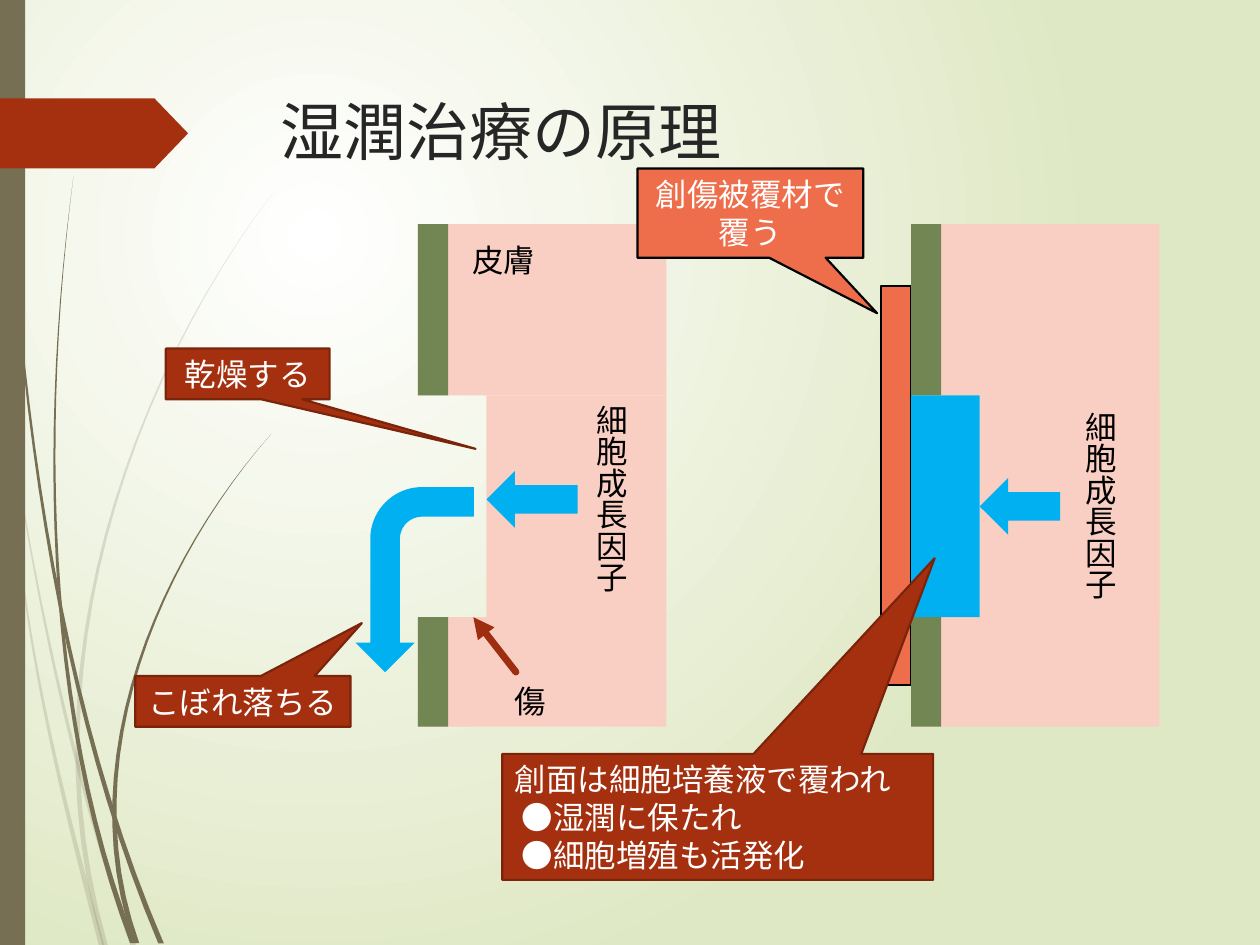
from dataclasses import dataclass

from lxml import etree
from pptx import Presentation
from pptx.dml.color import RGBColor
from pptx.enum.shapes import MSO_CONNECTOR, MSO_SHAPE
from pptx.enum.text import MSO_ANCHOR, PP_ALIGN
from pptx.oxml.ns import qn
from pptx.util import Pt

RECTANGLE = MSO_SHAPE.RECTANGLE
CALLOUT = MSO_SHAPE.RECTANGULAR_CALLOUT
PENNANT = MSO_SHAPE.PENTAGON
RIGHT_ARROW = MSO_SHAPE.RIGHT_ARROW
BENT_ARROW = MSO_SHAPE.BENT_ARROW
STRAIGHT = MSO_CONNECTOR.STRAIGHT
LEFT, CENTER = PP_ALIGN.LEFT, PP_ALIGN.CENTER
TOP, MIDDLE = MSO_ANCHOR.TOP, MSO_ANCHOR.MIDDLE


@dataclass(frozen=True)
class Theme:
    font: str = "TeX Gyre Adventor"
    title_size: float = 36
    text_size: float = 18
    title: str = "262626"
    black: str = "000000"
    white: str = "FFFFFF"
    meadow: str = "DFE8C4"
    grass: str = "766F54"
    red: str = "A53010"
    red_outline: str = "7A240C"
    pointer: str = "9E2E0F"
    orange: str = "EE6E4B"
    skin: str = "F9CFC3"
    epidermis: str = "728653"
    fluid: str = "00B0F0"


@dataclass(frozen=True)
class Blade:
    """A grass blade: a cubic curve from tip to base, bent towards two pull points."""
    tip: tuple
    upper_pull: tuple
    lower_pull: tuple
    base: tuple
    opacity: int = 100


THEME = Theme()
SLIDE_WIDTH, SLIDE_HEIGHT = 720, 540

FAINT = 20
BLADE_WIDTH = 3.2
BLADE_STEPS = 24
BLADES = [
    Blade((0, 205), (18, 331), (40, 439), (76, 540), FAINT),
    Blade((6, 252), (10, 353), (33, 446), (58, 540), FAINT),
    Blade((156, 110), (76, 216), (14, 382), (60, 540), FAINT),
    Blade((2, 0), (4, 180), (25, 382), (92, 539)),
    Blade((42, 101), (24, 238), (24, 403), (76, 539)),
    Blade((155, 248), (94, 317), (40, 432), (78, 539)),
]

# Skin section: an upper, a wounded and a lower row, measured from its top left corner.
SECTION_WIDTH = 142
EPIDERMIS_WIDTH = 17.3
WOUND_DEPTH = 39.2
UPPER_HEIGHT, WOUND_HEIGHT, LOWER_HEIGHT = 98, 126.7, 62.6
WOUND_TOP = UPPER_HEIGHT
LOWER_TOP = WOUND_TOP + WOUND_HEIGHT
SECTION_HEIGHT = LOWER_TOP + LOWER_HEIGHT
ARROW_HEIGHT = 32.4
LABEL_HEIGHT = 29


def rgb(value):
    return RGBColor.from_string(value)


def write_text(text_frame, text, *, size=THEME.text_size, color=THEME.black,
               alignment=LEFT, anchor=TOP):
    text_frame.word_wrap = True
    text_frame.vertical_anchor = anchor
    text_frame.text = text.replace("\n", "\v")
    paragraph = text_frame.paragraphs[0]
    paragraph.alignment = alignment
    for run in paragraph.runs:
        run.font.name = THEME.font
        run.font.size = Pt(size)
        run.font.color.rgb = rgb(color)


def paint(shape, fill, outline=None):
    shape.shadow.inherit = False
    shape.fill.solid()
    shape.fill.fore_color.rgb = rgb(fill)
    if outline:
        shape.line.color.rgb = rgb(outline)
        shape.line.width = Pt(1.25)
    else:
        shape.line.fill.background()


def add_block(slide, kind, box, fill, outline=None, rotation=0):
    shape = slide.shapes.add_shape(kind, *map(Pt, box))
    shape.rotation = rotation
    paint(shape, fill, outline)
    return shape


def add_label(slide, box, text, vertical=False):
    label = slide.shapes.add_textbox(*map(Pt, box))
    write_text(label.text_frame, text)
    if vertical:
        label.element.txBody.bodyPr.set("vert", "eaVert")


def add_callout(slide, box, tip, text, fill=THEME.red, outline=THEME.red_outline, alignment=CENTER):
    """Tip is the point on the slide that the callout points at."""
    left, top, width, height = box
    callout = add_block(slide, CALLOUT, box, fill, outline)
    callout.adjustments[0] = (tip[0] - left) / width - 0.5
    callout.adjustments[1] = (tip[1] - top) / height - 0.5
    write_text(callout.text_frame, text, color=THEME.white, alignment=alignment, anchor=MIDDLE)


def curve_point(blade, t):
    """Point of the blade's cubic Bézier curve, from the tip at 0 to the base at 1."""
    weights = ((1 - t) ** 3, 3 * t * (1 - t) ** 2, 3 * t ** 2 * (1 - t), t ** 3)
    anchors = (blade.tip, blade.upper_pull, blade.lower_pull, blade.base)
    return [sum(weight * anchor[axis] for weight, anchor in zip(weights, anchors))
            for axis in (0, 1)]


def add_blade(slide, blade):
    """Widens evenly from a sharp tip to the full width at the base."""
    left_edge, right_edge = [], []
    for step in range(BLADE_STEPS + 1):
        t = step / BLADE_STEPS
        x, y = curve_point(blade, t)
        half_width = BLADE_WIDTH * t / 2
        left_edge.append((Pt(x - half_width), Pt(y)))
        right_edge.append((Pt(x + half_width), Pt(y)))
    builder = slide.shapes.build_freeform(*left_edge[0], scale=1.0)
    builder.add_line_segments(left_edge[1:] + right_edge[:0:-1], close=True)
    shape = builder.convert_to_shape()
    paint(shape, THEME.grass)
    if blade.opacity < 100:
        color = shape.element.spPr.find(qn("a:solidFill"))[0]
        etree.SubElement(color, qn("a:alpha"), val=str(blade.opacity * 1000))


def add_background(slide):
    fill = slide.background.fill
    fill.gradient()
    for stop, color in zip(fill.gradient_stops, (THEME.white, THEME.meadow)):
        stop.color.rgb = rgb(color)
    linear = next(slide.element.iter(qn("a:lin")))
    circle = etree.Element(qn("a:path"), path="circle")
    etree.SubElement(circle, qn("a:fillToRect"), l="50000", t="50000", r="100000", b="100000")
    linear.getparent().replace(linear, circle)


def add_decoration(slide):
    for blade in BLADES:
        add_blade(slide, blade)
    add_block(slide, RECTANGLE, (0, 0, 14.4, SLIDE_HEIGHT), THEME.grass)
    pennant = add_block(slide, PENNANT, (0, 56.2, 107.5, 40), THEME.red)
    pennant.adjustments[0] = 0.48


def add_title(slide, box, text):
    title = slide.shapes.title
    title.left, title.top, title.width, title.height = map(Pt, box)
    write_text(title.text_frame, text, size=THEME.title_size, color=THEME.title)


def add_skin_section(slide, left, top, arrow_width, label_left, label_width, drop=0):
    """Skin in three rows, the middle one hollowed by the wound; drop lowers arrow and label."""
    rows = ((0, UPPER_HEIGHT, 0), (WOUND_TOP, WOUND_HEIGHT, WOUND_DEPTH),
            (LOWER_TOP, LOWER_HEIGHT, 0))
    for row_top, height, hollow in rows:
        add_block(slide, RECTANGLE, (left + hollow, top + row_top, SECTION_WIDTH - hollow, height),
                  THEME.skin)
    for row_top, height, hollow in rows:
        if not hollow:
            add_block(slide, RECTANGLE, (left, top + row_top, EPIDERMIS_WIDTH, height),
                      THEME.epidermis)
    arrow_top = top + WOUND_TOP + (WOUND_HEIGHT - ARROW_HEIGHT) / 2 - 4 + drop
    add_block(slide, RIGHT_ARROW, (left + WOUND_DEPTH, arrow_top, arrow_width, ARROW_HEIGHT),
              THEME.fluid, rotation=180)
    add_label(slide, (left + label_left, top + WOUND_TOP - 2 + drop, label_width, 129),
              "細胞成長因子", vertical=True)


def add_wound_pointer(slide, start, end):
    pointer = slide.shapes.add_connector(STRAIGHT, *map(Pt, start + end))
    pointer.line.color.rgb = rgb(THEME.pointer)
    pointer.line.width = Pt(4)
    line = pointer.element.spPr.find(qn("a:ln"))
    line.set("cap", "rnd")
    etree.SubElement(line, qn("a:tailEnd"), type="triangle")
    etree.SubElement(pointer.element.spPr, qn("a:effectLst"))


def add_dry_wound(slide, left, top):
    """Open wound whose fluid dries up and runs off to the left."""
    caption_top = top + SECTION_HEIGHT - LABEL_HEIGHT
    add_skin_section(slide, left, top, arrow_width=52, label_left=88.6, label_width=36)
    add_label(slide, (left + 24, top + 6, 64, LABEL_HEIGHT), "皮膚")
    add_label(slide, (left + 48, caption_top, 32.4, LABEL_HEIGHT), "傷")
    add_wound_pointer(slide, (left + 56, top + 256), (left + 31.7, top + LOWER_TOP))
    spill = add_block(slide, BENT_ARROW, (left - 54.7, top + 169.4, 105.8, 67.7),
                      THEME.fluid, rotation=90)
    spill.element.spPr.find(qn("a:xfrm")).set("flipV", "1")
    add_callout(slide, (left - 161.5, caption_top, 123, LABEL_HEIGHT),
                (left - 32, top + 228), "こぼれ落ちる")
    add_callout(slide, (left - 144, top + 71.2, 93.6, LABEL_HEIGHT),
                (left + 33, top + 128.5), "乾燥する")


def add_moist_wound(slide, left, top):
    """Covered wound that stays filled with fluid."""
    dressing_width = 17
    add_block(slide, RECTANGLE, (left - dressing_width, top + 35.3, dressing_width, 228),
              THEME.orange, THEME.black)
    add_callout(slide, (left - 156.3, top - 31.7, 129, 51), (left - 19.4, top + 51),
                "創傷被覆材で\n覆う", fill=THEME.orange, outline=THEME.black)
    add_skin_section(slide, left, top, arrow_width=46, label_left=92, label_width=30.2, drop=4)
    add_block(slide, RECTANGLE, (left, top + WOUND_TOP, WOUND_DEPTH, WOUND_HEIGHT), THEME.fluid)
    add_callout(slide, (left - 233.6, top + 302.8, 246.2, 72), (left + 13.5, top + 191),
                "創面は細胞培養液で覆われ\n ●湿潤に保たれ\n ●細胞増殖も活発化", alignment=LEFT)


def main():
    presentation = Presentation()
    presentation.slide_width, presentation.slide_height = Pt(SLIDE_WIDTH), Pt(SLIDE_HEIGHT)
    slide = presentation.slides.add_slide(presentation.slide_layouts[5])
    section_top = 128
    add_background(slide)
    add_decoration(slide)
    add_title(slide, (153.2, 49, 519, 100.8), "湿潤治療の原理")
    add_dry_wound(slide, 238.8, section_top)
    add_moist_wound(slide, 520.6, section_top)
    presentation.save("out.pptx")


if __name__ == "__main__":
    main()
